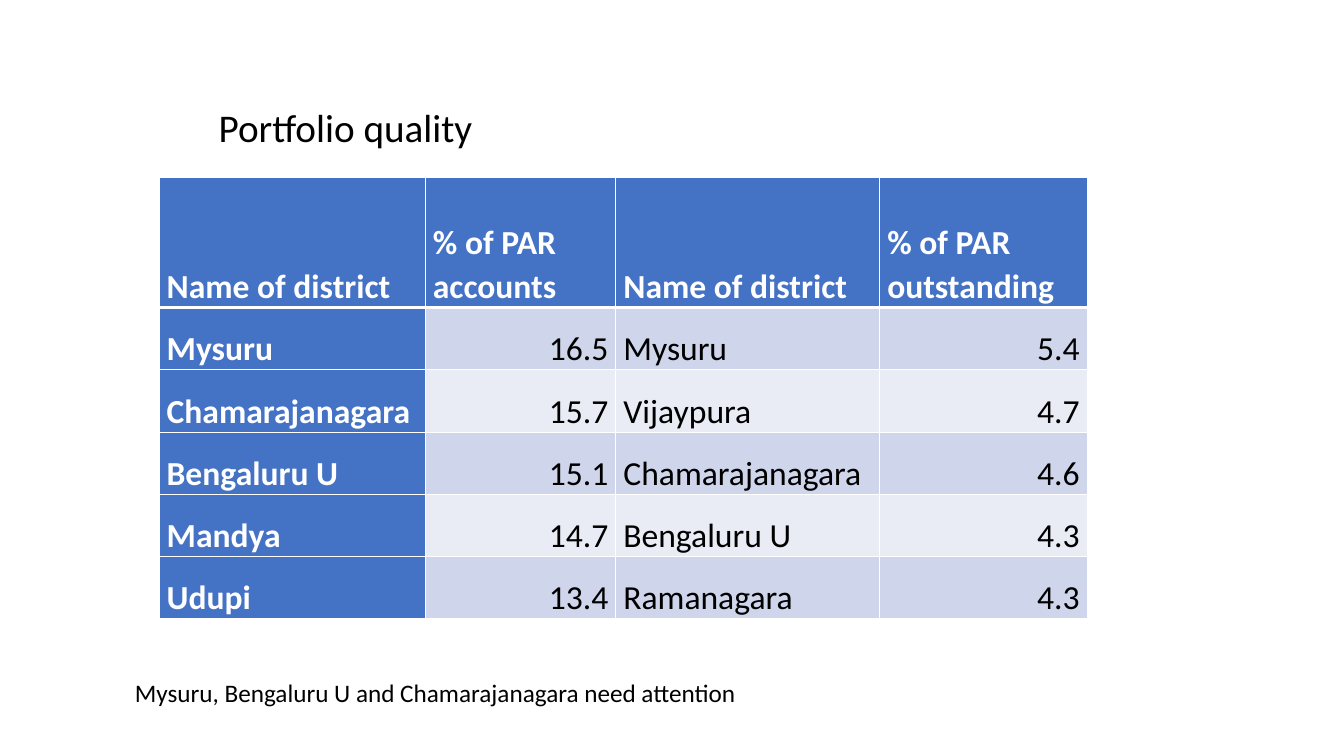
import pptx
import pptx.util
import pptx.dml.color
import pptx.enum.text
import pptx.oxml.ns
import lxml.etree

Cm = pptx.util.Cm
Pt = pptx.util.Pt
Align = pptx.enum.text.PP_ALIGN

COLORS = {
    "header": "4472C4",
    "odd": "CFD5EA",
    "even": "E9EBF5",
    "white": "FFFFFF",
    "black": "000000",
}
FONT = "Calibri"

HEADERS = ["Name of district", "% of PAR accounts", "Name of district", "% of PAR outstanding"]
DISTRICTS = [
    ["Mysuru", "16.5", "Mysuru", "5.4"],
    ["Chamarajanagara", "15.7", "Vijaypura", "4.7"],
    ["Bengaluru U", "15.1", "Chamarajanagara", "4.6"],
    ["Mandya", "14.7", "Bengaluru U", "4.3"],
    ["Udupi", "13.4", "Ramanagara", "4.3"],
]
COLUMN_WIDTHS = [6.71, 4.8, 6.65, 5.23]
HEADER_HEIGHT = 3.28
ROW_HEIGHT = 1.57


def rgb(name):
    return pptx.dml.color.RGBColor.from_string(COLORS[name])


def write_text(text_frame, text, size, color="black", bold=False,
               align=Align.LEFT, line_spacing=None, space_after=None):
    paragraph = text_frame.paragraphs[0]
    paragraph.alignment = align
    paragraph.line_spacing = line_spacing
    paragraph.space_after = space_after
    run = paragraph.add_run()
    run.text = text
    run.font.name = FONT
    run.font.size = Pt(size)
    run.font.bold = bold
    run.font.color.rgb = rgb(color)


def add_label(slide, box, text, size, wrap):
    shape = slide.shapes.add_textbox(*(Cm(length) for length in box))
    shape.text_frame.word_wrap = wrap
    shape.text_frame.auto_size = pptx.enum.text.MSO_AUTO_SIZE.SHAPE_TO_FIT_TEXT
    write_text(shape.text_frame, text, size)


def set_borders(cell, **widths):
    properties = cell._tc.get_or_add_tcPr()
    qn = pptx.oxml.ns.qn
    for side in ("L", "R", "T", "B"):
        width = Pt(widths.get(side, 1))
        line = lxml.etree.SubElement(properties, qn("a:ln" + side), w=str(width))
        fill = lxml.etree.SubElement(line, qn("a:solidFill"))
        lxml.etree.SubElement(fill, qn("a:srgbClr"), val=COLORS["white"])


def format_cell(cell, text, row, column):
    emphasised = row == 0 or column == 0
    numeric = row > 0 and column % 2 == 1
    cell.margin_left = cell.margin_right = Cm(0.19)
    cell.margin_top = cell.margin_bottom = 0
    cell.vertical_anchor = pptx.enum.text.MSO_ANCHOR.BOTTOM
    set_borders(cell, T=3 if row == 1 else 1, B=3 if row == 0 else 1)
    band = "odd" if row % 2 else "even"
    cell.fill.solid()
    cell.fill.fore_color.rgb = rgb("header" if emphasised else band)
    write_text(cell.text_frame, text, 24,
               color="white" if emphasised else "black", bold=emphasised,
               align=Align.RIGHT if numeric else Align.LEFT,
               line_spacing=1.07, space_after=Pt(8))


def add_district_table(slide, left, top):
    records = [HEADERS] + DISTRICTS
    heights = [HEADER_HEIGHT] + [ROW_HEIGHT] * len(DISTRICTS)
    table = slide.shapes.add_table(
        len(records), len(HEADERS), Cm(left), Cm(top),
        Cm(sum(COLUMN_WIDTHS)), Cm(sum(heights))).table
    table.first_col = True
    for column, width in zip(table.columns, COLUMN_WIDTHS):
        column.width = Cm(width)
    for row, height in zip(table.rows, heights):
        row.height = Cm(height)
    for row, record in enumerate(records):
        for column, text in enumerate(record):
            format_cell(table.cell(row, column), text, row, column)


def build_portfolio_slide(presentation):
    slide = presentation.slides.add_slide(presentation.slide_layouts[6])
    add_district_table(slide, 4.01, 4.47)
    add_label(slide, (5.26, 2.49, 9.35, 1.45), "Portfolio quality", 28, wrap=True)
    add_label(slide, (3.15, 16.94, 15.85, 1.02),
              "Mysuru, Bengaluru U and Chamarajanagara need attention", 18, wrap=False)


def main():
    presentation = pptx.Presentation()
    presentation.slide_width = Cm(33.87)
    presentation.slide_height = Cm(19.05)
    build_portfolio_slide(presentation)
    presentation.save("out.pptx")


if __name__ == "__main__":
    main()
